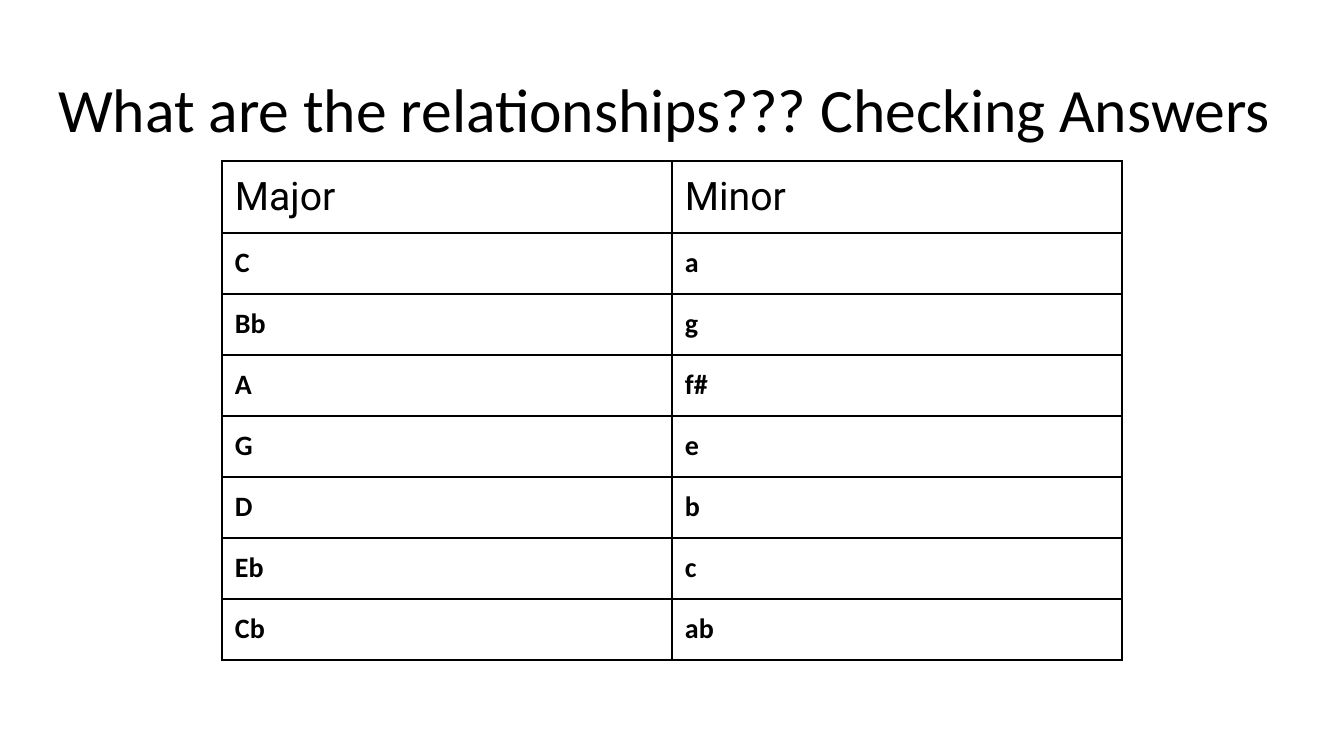
from pptx import Presentation
from pptx import util as u
from pptx.dml.color import RGBColor
from pptx.enum import text
from pptx.oxml import parse_xml
from pptx.oxml.ns import nsdecls

PX = 914400 / 100.8
BLACK = RGBColor(0x00, 0x00, 0x00)
INSET = 13
HEADER_HEIGHT, KEY_HEIGHT = 72, 61
COLUMN_WIDTH = 450
KEYS = [
    ("Major", "Minor"),
    ("C", "a"),
    ("Bb", "g"),
    ("A", "f#"),
    ("G", "e"),
    ("D", "b"),
    ("Eb", "c"),
    ("Cb", "ab"),
]


def px(n):
    return u.Emu(round(n * PX))


def set_insets(box):
    box.margin_left = box.margin_right = px(INSET)
    box.margin_top = box.margin_bottom = px(INSET)


def format_text(p, font, size, bold=False):
    p.alignment = text.PP_ALIGN.LEFT
    for r in p.runs:
        r.font.name = font
        r.font.size = u.Pt(size)
        r.font.bold = bold
        r.font.color.rgb = BLACK


def add_title(s, words):
    sp = s.shapes.title
    sp.left, sp.top, sp.width, sp.height = px(45), px(66), px(1252), px(85)
    tf = sp.text_frame
    tf.text = words
    tf.word_wrap = True
    tf.auto_size = text.MSO_AUTO_SIZE.NONE
    tf.vertical_anchor = text.MSO_ANCHOR.TOP
    set_insets(tf)
    p = tf.paragraphs[0]
    p.line_spacing = 0.9
    format_text(p, "Calibri", 44)


def add_borders(cell):
    tcPr = cell._tc.get_or_add_tcPr()
    for i, side in enumerate(("lnL", "lnR", "lnT", "lnB")):
        tcPr.insert(i, parse_xml(
            f'<a:{side} {nsdecls("a")} w="{u.Pt(1)}"><a:solidFill>'
            f'<a:srgbClr val="{BLACK}"/></a:solidFill></a:{side}>'))


def fill_cell(cell, words, header):
    cell.text = words
    cell.fill.background()
    set_insets(cell)
    add_borders(cell)
    p = cell.text_frame.paragraphs[0]
    if header:
        format_text(p, "Roboto", 28)
    else:
        format_text(p, "Calibri", 20, bold=True)


def add_key_table(s, keys):
    height = HEADER_HEIGHT + KEY_HEIGHT * (len(keys) - 1)
    table = s.shapes.add_table(len(keys), 2, px(222), px(161),
                               px(2 * COLUMN_WIDTH), px(height)).table
    table.horz_banding = False
    table.first_row = False
    for column in table.columns:
        column.width = px(COLUMN_WIDTH)
    for i, names in enumerate(keys):
        table.rows[i].height = px(KEY_HEIGHT if i else HEADER_HEIGHT)
        for j, name in enumerate(names):
            fill_cell(table.cell(i, j), name, header=i == 0)


def main():
    prs = Presentation()
    prs.slide_width, prs.slide_height = px(1344), px(756)
    s = prs.slides.add_slide(prs.slide_layouts[5])
    add_title(s, "What are the relationships??? Checking Answers")
    add_key_table(s, KEYS)
    prs.save("out.pptx")


if __name__ == "__main__":
    main()
